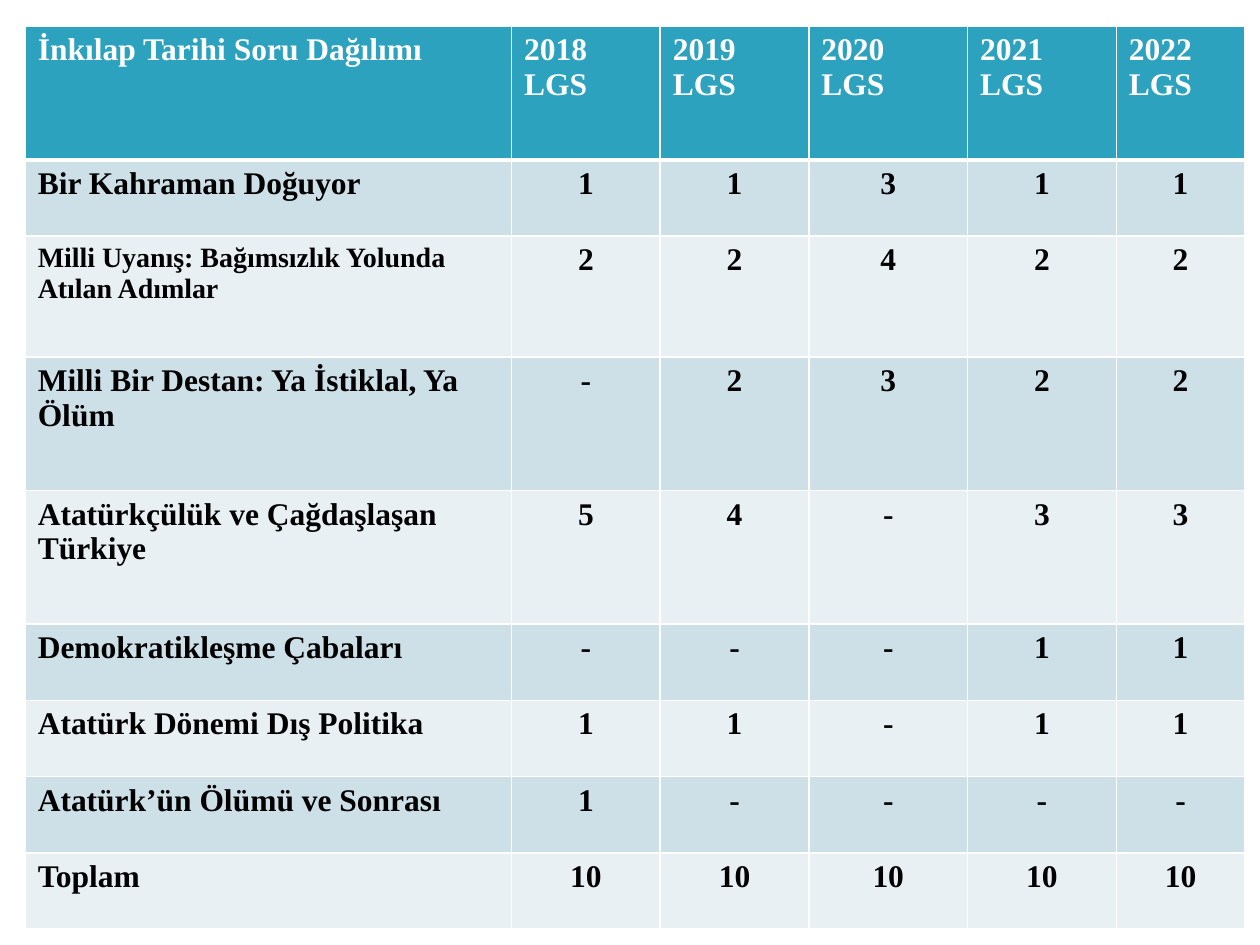
from typing import NamedTuple

from lxml.etree import SubElement
from pptx import Presentation
from pptx.dml.color import RGBColor
from pptx.enum.text import PP_ALIGN
from pptx.oxml.ns import qn
from pptx.util import Emu, Inches, Pt

WHITE, BLACK = "FFFFFF", "000000"
HEADER_FILL, BANDS = "2DA2BF", ("CDE0E8", "E8F0F4")
FONT = "Times New Roman"
THIN, THICK = 1, 3

# Shares of the slide's width and height, in percent
LEFT, TOP = 2, 2.8
COLUMNS = (38.6, 11.8, 11.8, 12.6, 11.8, 10.2)
SHORT, MEDIUM, TALL = 8.07, 12.8, 14.13


class Unit(NamedTuple):
    title: str
    counts: str
    height: float = SHORT
    size: int = 18


HEADER = ("İnkılap Tarihi Soru Dağılımı", *(f"{year} LGS" for year in range(2018, 2023)))
UNITS = (
    Unit("Bir Kahraman Doğuyor", "1 1 3 1 1"),
    Unit("Milli Uyanış: Bağımsızlık Yolunda Atılan Adımlar", "2 2 4 2 2", MEDIUM, 16),
    Unit("Milli Bir Destan: Ya İstiklal, Ya Ölüm", "- 2 3 2 2", TALL),
    Unit("Atatürkçülük ve Çağdaşlaşan Türkiye", "5 4 - 3 3", TALL),
    Unit("Demokratikleşme Çabaları", "- - - 1 1"),
    Unit("Atatürk Dönemi Dış Politika", "1 1 - 1 1"),
    Unit("Atatürk’ün Ölümü ve Sonrası", "1 - - - -"),
    Unit("Toplam", "10 10 10 10 10"),
)


def rgb(color: str) -> RGBColor:
    return RGBColor.from_string(color)


def share(percent: float, length: int) -> Emu:
    return Emu(round(length * percent / 100))


def add_borders(cell, top: int, bottom: int) -> None:
    """Draw white cell borders; must come before the fill in the cell's XML."""
    tcPr = cell._tc.get_or_add_tcPr()
    for side, width in (("L", THIN), ("R", THIN), ("T", top), ("B", bottom)):
        line = SubElement(tcPr, qn(f"a:ln{side}"), w=str(Pt(width)))
        SubElement(SubElement(line, qn("a:solidFill")), qn("a:srgbClr"), val=WHITE)


def fill_cell(cell, text: str, fill: str, color: str, size: int, align: PP_ALIGN,
              top: int = THIN, bottom: int = THIN) -> None:
    add_borders(cell, top, bottom)
    cell.fill.solid()
    cell.fill.fore_color.rgb = rgb(fill)
    p = cell.text_frame.paragraphs[0]
    p.text = text
    p.alignment = align
    p.font.name, p.font.size, p.font.bold = FONT, Pt(size), True
    p.font.color.rgb = rgb(color)


def add_question_table(slide, width: int, height: int) -> None:
    row_shares = (TALL, *(unit.height for unit in UNITS))
    table = slide.shapes.add_table(
        len(row_shares), len(COLUMNS), share(LEFT, width), share(TOP, height),
        share(sum(COLUMNS), width), share(sum(row_shares), height)).table
    for column, percent in zip(table.columns, COLUMNS):
        column.width = share(percent, width)
    for row, percent in zip(table.rows, row_shares):
        row.height = share(percent, height)

    for c, text in enumerate(HEADER):
        align = PP_ALIGN.LEFT if c else PP_ALIGN.JUSTIFY
        fill_cell(table.cell(0, c), text, HEADER_FILL, WHITE, 18, align, bottom=THICK)
    for r, unit in enumerate(UNITS, start=1):
        band = BANDS[(r - 1) % 2]
        top = THICK if r == 1 else THIN
        fill_cell(table.cell(r, 0), unit.title, band, BLACK, unit.size, PP_ALIGN.LEFT, top)
        for c, count in enumerate(unit.counts.split(), start=1):
            fill_cell(table.cell(r, c), count, band, BLACK, 18, PP_ALIGN.CENTER, top)


def main() -> None:
    prs = Presentation()
    prs.slide_width, prs.slide_height = Inches(10), Inches(7.5)
    s = prs.slides.add_slide(prs.slide_layouts[6])
    add_question_table(s, prs.slide_width, prs.slide_height)
    prs.save("out.pptx")


if __name__ == "__main__":
    main()
